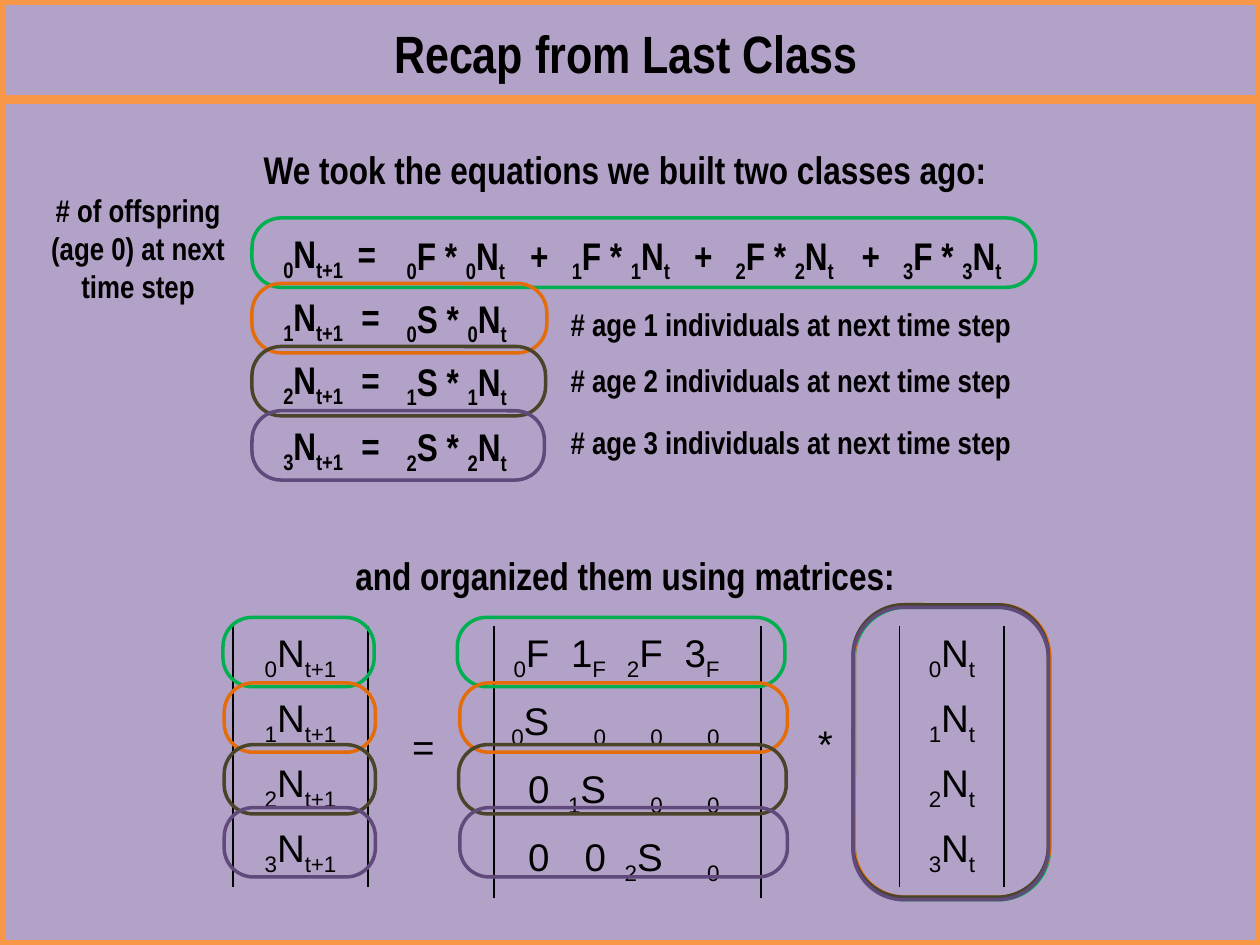
from lxml.etree import SubElement
from pptx import Presentation
from pptx.dml.color import RGBColor
from pptx.enum.shapes import MSO_CONNECTOR, MSO_SHAPE
from pptx.enum.text import MSO_ANCHOR, PP_ALIGN
from pptx.oxml import parse_xml
from pptx.oxml.ns import nsdecls, qn
from pptx.util import Inches, Pt

NO_STYLE = "{2D5ABB26-0587-4C30-8999-92F81FD0307C}"
BLACK, ORANGE = "000000", "F79646"
RING_COLORS = ["00B050", "E46C0A", "4A452A", "604A7B"]


def rgb(value):
    return RGBColor.from_string(value)


def box_of(*lengths):
    return [Inches(n) for n in lengths]


def style_font(p, size, name="Arial Narrow", bold=True):
    p.font.size = Pt(size)
    p.font.name = name
    p.font.bold = bold
    p.font.color.rgb = rgb(BLACK)


def add_math(p, text):
    for i, part in enumerate(text.split("_")):
        if part:
            r = p.add_run()
            r.text = part
            if i % 2:
                r._r.get_or_add_rPr().set("baseline", "-25000")


def add_tabs(p, positions, align="l"):
    tabs = SubElement(p._p.get_or_add_pPr(), qn("a:tabLst"))
    for position in positions:
        SubElement(tabs, qn("a:tab"), pos=str(Inches(position)), algn=align)


def add_text(s, box, lines, size=22, align=PP_ALIGN.LEFT, tab=None):
    tf = s.shapes.add_textbox(*box_of(*box)).text_frame
    tf.word_wrap = True
    for i, line in enumerate(lines):
        p = tf.add_paragraph() if i else tf.paragraphs[0]
        p.alignment = align
        if tab:
            add_tabs(p, [tab])
        add_math(p, line)
        style_font(p, size)


def add_title(s, text):
    title = s.shapes.title
    title.left, title.top, title.width, title.height = box_of(0.74, 0.12, 8.46, 0.6)
    tf = title.text_frame
    tf.text = text
    tf.vertical_anchor = MSO_ANCHOR.MIDDLE
    p = tf.paragraphs[0]
    p.alignment = PP_ALIGN.CENTER
    style_font(p, 30)


def add_outline(shapes, kind, box, color, width, radius=None):
    shape = shapes.add_shape(kind, *box_of(*box))
    shape.shadow.inherit = False
    shape.fill.background()
    shape.line.color.rgb = rgb(color)
    shape.line.width = Pt(width)
    if radius:
        shape.adjustments[0] = radius


def add_ring(shapes, box, color, radius=0.42):
    add_outline(shapes, MSO_SHAPE.ROUNDED_RECTANGLE, box, color, 2, radius)


def add_rule(s, y):
    rule = s.shapes.add_connector(MSO_CONNECTOR.STRAIGHT, *box_of(0.01, y, 10, y))
    rule.line.color.rgb = rgb(ORANGE)
    rule.line.width = Pt(5)
    SubElement(rule._element.spPr, qn("a:effectLst"))


def add_border(cell, tag):
    border = parse_xml(
        f'<a:{tag} {nsdecls("a")} w="{Pt(1)}"><a:solidFill>'
        f'<a:srgbClr val="{BLACK}"/></a:solidFill></a:{tag}>'
    )
    cell._tc.get_or_add_tcPr().insert(0, border)


def add_matrix(s, left, top, width, row_height, rows, align=PP_ALIGN.CENTER,
               bars=True, tabs=None):
    table = s.shapes.add_table(
        len(rows), 1, *box_of(left, top, width, row_height * len(rows))).table
    table._tbl.tblPr.find(qn("a:tableStyleId")).text = NO_STYLE
    table.first_row = table.horz_banding = False
    for i, text in enumerate(rows):
        cell = table.cell(i, 0)
        cell.fill.background()
        if bars:
            add_border(cell, "lnR")
            add_border(cell, "lnL")
        p = cell.text_frame.paragraphs[0]
        p.alignment = align
        if tabs:
            add_tabs(p, tabs, "r")
        add_math(p, text)
        style_font(p, 22, "Arial", False)


def add_equations(s):
    for age, top in enumerate([1.78, 2.28, 2.78, 3.3]):
        add_text(s, (2.15, top, 1.35, 0.47), [f"_{age}_N_t+1_\t="],
                 tab=0.62 if age else 0.59)
        source, rate = (age - 1, "S") if age else (0, "F")
        add_text(s, (3.13, top + 0.01, 1.17, 0.47),
                 [f"_{source}_{rate} * _{source}_N_t_"])
    for age, left in enumerate([4.11, 5.41, 6.74], 1):
        add_text(s, (left, 1.79, 1.51, 0.47),
                 [f"+\t_{age}_F * _{age}_N_t_"], tab=0.33)


def add_matrices(s):
    ages = range(4)
    add_matrix(s, 3.17, 5.72, 0.25, 0.5, ["="], PP_ALIGN.LEFT, False)
    add_matrix(s, 1.85, 4.97, 1.07, 0.515, [f"_{a}_N_t+1_" for a in ages])
    rates = [[f"_{a}_F" for a in ages]]
    rates += [[f"_{a}_S_" if a == i else "0" for a in ages] for i in range(3)]
    rates[0] = [f"{rate}_" for rate in rates[0]]
    add_matrix(s, 3.92, 4.97, 2.12, 0.54,
               ["\t" + "\t".join(row) for row in rates], PP_ALIGN.LEFT,
               tabs=[0.34, 0.79, 1.24, 1.69])
    add_matrix(s, 6.39, 5.69, 0.33, 0.5, ["*"], PP_ALIGN.LEFT, False)
    add_matrix(s, 7.14, 4.97, 0.83, 0.515, [f"_{a}_N_t_" for a in ages])


def add_rings(s):
    equations = [(1.73, 6.22), (2.25, 2.34), (2.75, 2.33), (3.26, 2.32)]
    for (top, width), color in zip(equations, RING_COLORS):
        add_ring(s.shapes, (2, top, width, 0.55), color)
    matrix_rows = [
        (3.63, 1.77, 4.9, 6.78, 4.82),
        (3.65, 1.78, 5.42, 6.78, 4.8),
        (3.64, 1.78, 5.91, 6.77, 4.8),
        (3.65, 1.78, 6.41, 6.77, 4.82),
    ]
    for (rates, result, top, vector, vector_top), color in zip(matrix_rows, RING_COLORS):
        shapes = s.shapes.add_group_shape().shapes
        add_ring(shapes, (rates, top, 2.6, 0.55), color)
        add_ring(shapes, (vector, vector_top, 1.55, 2.32), color, 0.26)
        add_ring(shapes, (result, top, 1.2, 0.55), color)


def main():
    prs = Presentation()
    prs.slide_width, prs.slide_height = Inches(10), Inches(7.5)
    s = prs.slides.add_slide(prs.slide_layouts[5])
    s.background.fill.solid()
    s.background.fill.fore_color.rgb = rgb("B3A2C7")
    add_outline(s.shapes, MSO_SHAPE.RECTANGLE, (0, 0, 10, 7.5), ORANGE, 6)
    add_rule(s, 0.79)
    add_title(s, "Recap from Last Class")
    add_equations(s)
    add_text(s, (0.42, 4.33, 9.08, 0.47), ["and organized them using matrices:"],
             align=PP_ALIGN.CENTER)
    add_matrices(s)
    add_rings(s)
    add_text(s, (0.42, 1.11, 9.08, 0.47),
             ["We took the equations we built two classes ago:"],
             align=PP_ALIGN.CENTER)
    add_text(s, (0.27, 1.47, 1.65, 1.01),
             ["# of offspring (age 0) at next", "time step"], 18, PP_ALIGN.CENTER)
    for age, top in enumerate([2.37, 2.82, 3.31], 1):
        add_text(s, (4.43, top, 5, 0.4),
                 [f"# age {age} individuals at next time step"], 18)
    prs.save("out.pptx")


if __name__ == "__main__":
    main()
